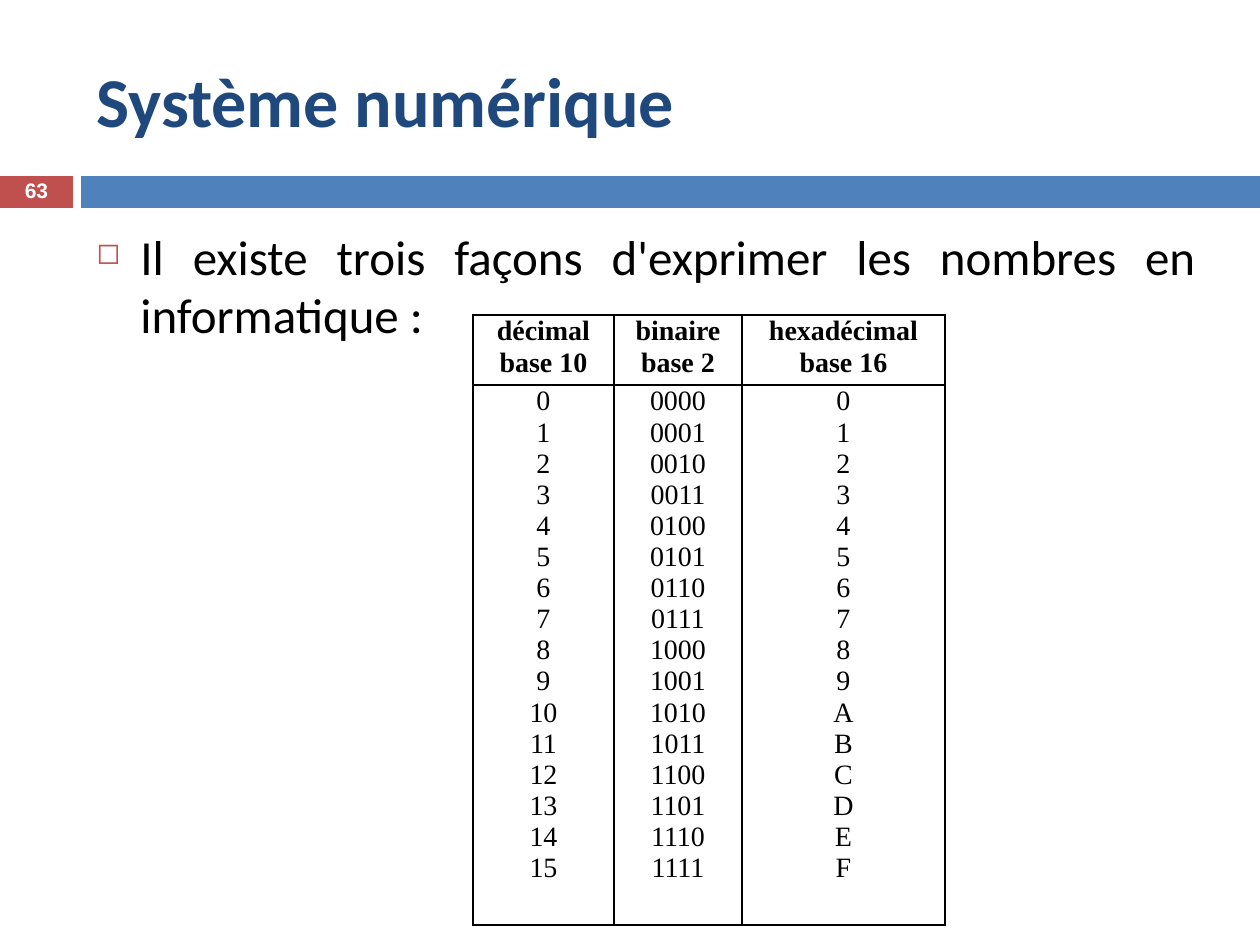
"""Build the slide comparing decimal, binary and hexadecimal numbers."""
from dataclasses import dataclass

from lxml.etree import SubElement
from pptx import Presentation
from pptx.dml.color import RGBColor
from pptx.enum.shapes import MSO_SHAPE as Shape
from pptx.enum.text import MSO_ANCHOR as Anchor, PP_ALIGN as Align
from pptx.oxml.ns import qn
from pptx.util import Emu, Pt

EMU_PER_INCH = 914400
PX_PER_INCH = 126
COLORS = {
    "accent": "C0504D",
    "bar": "4F81BD",
    "title": "1F497D",
    "text": "000000",
    "paper": "FFFFFF",
}


@dataclass(frozen=True)
class Box:
    left: int
    top: int
    width: int
    height: int


@dataclass(frozen=True)
class Style:
    font: str
    size: int
    color: str
    bold: bool = False


@dataclass(frozen=True)
class Bar:
    box: Box
    color: str


@dataclass(frozen=True)
class Label:
    box: Box
    text: str
    style: Style
    align: Align = Align.LEFT
    anchor: Anchor = Anchor.MIDDLE
    line_spacing: float = 1.0


@dataclass(frozen=True)
class Column:
    heading: tuple[str, str]
    width: int
    number_format: str


BARS = (
    Bar(Box(0, 176, 73, 32), "accent"),
    Bar(Box(81, 176, 1179, 32), "bar"),
)
TITLE = Label(Box(84, 32, 1124, 136), "Système numérique", Style("Calibri", 40, "title", True))
BODY = Label(
    Box(84, 220, 1124, 620),
    "Il existe trois façons d'exprimer les nombres en informatique :",
    Style("Calibri", 28, "text"),
    Align.JUSTIFY,
    Anchor.TOP,
)
PAGE_NUMBER = Label(
    Box(0, 175, 73, 34), "63", Style("Arial", 12, "paper", True), Align.CENTER, line_spacing=0.8
)
COLUMNS = (
    Column(("décimal", "base 10"), 141, "d"),
    Column(("binaire", "base 2"), 128, "04b"),
    Column(("hexadécimal", "base 16"), 203, "X"),
)
ROW_HEIGHTS = (70, 540)
HEADING_STYLE = Style("Times New Roman", 16, "text", True)
NUMBER_STYLE = Style("Times New Roman", 16, "text")


def px(length: int) -> Emu:
    """Turn pixels into EMU."""
    return Emu(round(length * EMU_PER_INCH / PX_PER_INCH))


def place(box: Box) -> tuple[Emu, Emu, Emu, Emu]:
    """Return the box in EMU."""
    return px(box.left), px(box.top), px(box.width), px(box.height)


def rgb(name: str) -> RGBColor:
    """Look up a named colour."""
    return RGBColor.from_string(COLORS[name])


def add_text(paragraph, text: str, style: Style) -> None:
    """Append one styled run."""
    run = paragraph.add_run()
    run.text = text
    run.font.name = style.font
    run.font.size = Pt(style.size)
    run.font.bold = style.bold
    run.font.color.rgb = rgb(style.color)


def add_bar(slide, bar: Bar) -> None:
    """Draw a plain filled rectangle."""
    shape = slide.shapes.add_shape(Shape.RECTANGLE, *place(bar.box))
    shape.shadow.inherit = False
    shape.fill.solid()
    shape.fill.fore_color.rgb = rgb(bar.color)
    shape.line.fill.background()


def add_label(slide, label: Label):
    """Draw a text box and return its paragraph."""
    frame = slide.shapes.add_textbox(*place(label.box)).text_frame
    frame.word_wrap = True
    frame.vertical_anchor = label.anchor
    paragraph = frame.paragraphs[0]
    paragraph.alignment = label.align
    paragraph.line_spacing = label.line_spacing
    add_text(paragraph, label.text, label.style)
    return paragraph


def add_bullet(paragraph, indent: int) -> None:
    """Give the paragraph a small square bullet."""
    paragraph.space_before = Pt(7)
    properties = paragraph._p.get_or_add_pPr()
    properties.set("marL", str(px(indent)))
    properties.set("indent", str(-px(indent)))
    color = SubElement(properties, qn("a:buClr"))
    SubElement(color, qn("a:srgbClr"), val=COLORS["accent"])
    SubElement(properties, qn("a:buSzPct"), val="60000")
    SubElement(properties, qn("a:buChar"), char="◻")


def add_borders(cell) -> None:
    """Outline a cell on all four sides."""
    properties = cell._tc.get_or_add_tcPr()
    for side in ("lnL", "lnR", "lnT", "lnB"):
        line = SubElement(properties, qn(f"a:{side}"), w=str(Pt(1)))
        fill = SubElement(line, qn("a:solidFill"))
        SubElement(fill, qn("a:srgbClr"), val=COLORS["text"])


def fill_cell(cell, lines: tuple[str, ...], style: Style) -> None:
    """Write centred lines into a bordered cell."""
    add_borders(cell)
    cell.fill.solid()
    cell.fill.fore_color.rgb = rgb("paper")
    cell.margin_left = cell.margin_right = cell.margin_top = cell.margin_bottom = px(1)
    paragraph = cell.text_frame.paragraphs[0]
    paragraph.alignment = Align.CENTER
    for index, line in enumerate(lines):
        if index:
            paragraph.add_line_break()
        add_text(paragraph, line, style)


def add_number_table(slide, left: int, top: int) -> None:
    """Draw the table of the numbers 0 to 15 in three bases."""
    box = Box(left, top, sum(column.width for column in COLUMNS), sum(ROW_HEIGHTS))
    table = slide.shapes.add_table(len(ROW_HEIGHTS), len(COLUMNS), *place(box)).table
    table.first_row = table.horz_banding = False
    for row, height in zip(table.rows, ROW_HEIGHTS):
        row.height = px(height)
    for index, column in enumerate(COLUMNS):
        table.columns[index].width = px(column.width)
        numbers = tuple(format(number, column.number_format) for number in range(16))
        fill_cell(table.cell(0, index), column.heading, HEADING_STYLE)
        fill_cell(table.cell(1, index), numbers, NUMBER_STYLE)


def main() -> None:
    """Assemble and save the presentation."""
    presentation = Presentation()
    presentation.slide_width, presentation.slide_height = px(1260), px(945)
    slide = presentation.slides.add_slide(presentation.slide_layouts[6])
    for bar in BARS:
        add_bar(slide, bar)
    add_label(slide, TITLE)
    add_bullet(add_label(slide, BODY), 44)
    add_number_table(slide, 473, 315)
    add_label(slide, PAGE_NUMBER)
    presentation.save("out.pptx")


if __name__ == "__main__":
    main()
